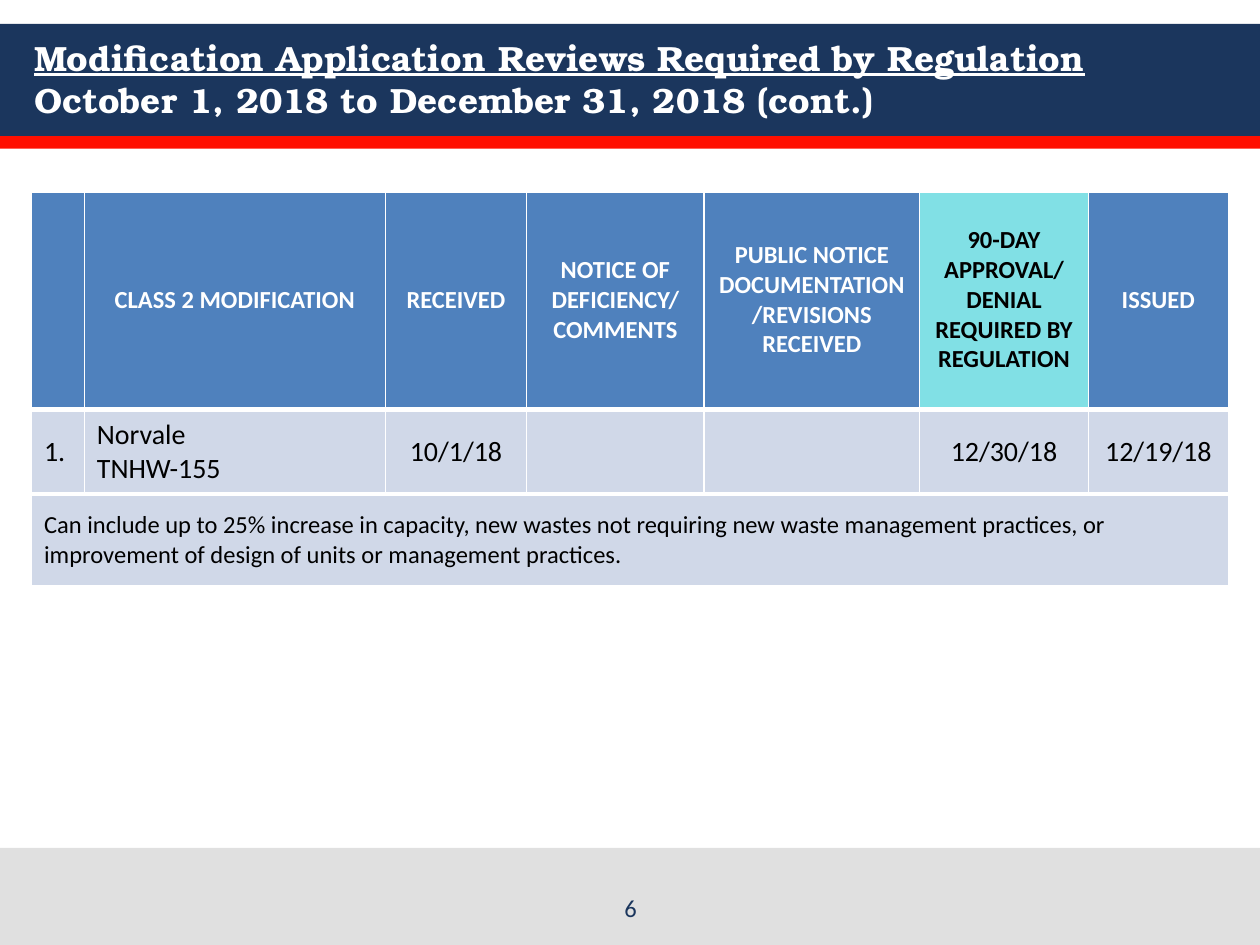
import pptx
import pptx.dml.color
import pptx.enum.shapes
import pptx.enum.text
import pptx.oxml
import pptx.oxml.ns
import pptx.util

Inches = pptx.util.Inches
Color = pptx.dml.color.RGBColor
Align = pptx.enum.text.PP_ALIGN
Anchor = pptx.enum.text.MSO_ANCHOR

NAVY = Color(0x1B, 0x36, 0x5D)
RED = Color(0xFF, 0x0F, 0x00)
GRAY = Color(0xE0, 0xE0, 0xE0)
BLUE = Color(0x4F, 0x81, 0xBD)
AQUA = Color(0x81, 0xE0, 0xE5)
PALE = Color(0xD0, 0xD8, 0xE8)
WHITE = Color(0xFF, 0xFF, 0xFF)
BLACK = Color(0x00, 0x00, 0x00)

COLS = [0.42, 2.39, 1.12, 1.41, 1.71, 1.34, 1.11]
ROWS = [1.74, 0.67, 0.74]
DUE = 5  # column of the regulatory deadline
HEADS = [
    "",
    "CLASS 2 MODIFICATION",
    "RECEIVED",
    "NOTICE OF DEFICIENCY/ COMMENTS",
    "PUBLIC NOTICE DOCUMENTATION/REVISIONS RECEIVED",
    "90-DAY APPROVAL/ DENIAL\nREQUIRED BY REGULATION",
    "ISSUED",
]
ENTRY = ["1.", "Norvale\nTNHW-155", "10/1/18", "", "", "12/30/18", "12/19/18"]
NOTE = (
    "Can include up to 25% increase in capacity, new wastes not requiring "
    "new waste management practices, or\n"
    "improvement of design of units or management practices."
)


def style(frame, size, color, align, face="Calibri", bold=False):
    for para in frame.paragraphs:
        para.alignment = align
        for font in [para.font] + [run.font for run in para.runs]:
            font.name = face
            font.size = pptx.util.Pt(size)
            font.bold = bold
            font.color.rgb = color


def add_band(slide, top, height, color):
    band = slide.shapes.add_shape(
        pptx.enum.shapes.MSO_SHAPE.RECTANGLE,
        0, Inches(top), Inches(10), Inches(height))
    band.shadow.inherit = False
    band.fill.solid()
    band.fill.fore_color.rgb = color
    band.line.fill.background()


def add_title(slide, text):
    """Fill the title and bring it in front of the bands."""
    title = slide.shapes.title
    title.left, title.top = Inches(0.17), Inches(0.17)
    title.width, title.height = Inches(9.67), Inches(0.9)
    frame = title.text_frame
    frame.text = text
    frame.vertical_anchor = Anchor.MIDDLE
    style(frame, 20, WHITE, Align.LEFT, "TeX Gyre Bonum", True)
    frame.paragraphs[0].runs[0].font.underline = True
    tree = title._element.getparent()
    tree.append(title._element)


def set_edges(cell, top, bottom):
    props = cell._tc.get_or_add_tcPr()
    for side, width in (("L", 1), ("R", 1), ("T", top), ("B", bottom)):
        props.append(pptx.oxml.parse_xml(
            f'<a:ln{side} {pptx.oxml.ns.nsdecls("a")} '
            f'w="{pptx.util.Pt(width)}"><a:solidFill>'
            f'<a:srgbClr val="{WHITE}"/></a:solidFill></a:ln{side}>'))


def set_cell(cell, text, fill, size, color, align, inset, bold=False):
    cell.text_frame.text = text
    cell.vertical_anchor = Anchor.MIDDLE
    cell.margin_left = cell.margin_right = Inches(inset)
    cell.margin_top = cell.margin_bottom = Inches(0.01)
    style(cell.text_frame, size, color, align, bold=bold)
    cell.fill.solid()
    cell.fill.fore_color.rgb = fill


def add_grid(slide):
    grid = slide.shapes.add_table(
        len(ROWS), len(COLS), Inches(0.25), Inches(1.51),
        Inches(sum(COLS)), Inches(sum(ROWS))).table
    grid.first_row = grid.horz_banding = False
    for col, width in zip(grid.columns, COLS):
        col.width = Inches(width)
    for row, height in zip(grid.rows, ROWS):
        row.height = Inches(height)
    last = len(COLS) - 1
    grid.cell(2, 0).merge(grid.cell(2, last))
    for cell in grid.iter_cells():
        set_edges(cell, 3, 3)
    for col, (head, item) in enumerate(zip(HEADS, ENTRY)):
        fill, color = (AQUA, BLACK) if col == DUE else (BLUE, WHITE)
        set_cell(grid.cell(0, col), head, fill, 14, color,
                 Align.CENTER, 0.08, True)
        align = Align.LEFT if col < 2 else Align.CENTER
        inset = 0.01 if col in (2, last) else 0.1
        set_cell(grid.cell(1, col), item, PALE, 16, BLACK, align, inset)
    set_cell(grid.cell(2, 0), NOTE, PALE, 14, BLACK, Align.LEFT, 0.1)


def add_number(slide, text):
    box = slide.shapes.add_textbox(
        Inches(3.42), Inches(6.97), Inches(3.17), Inches(0.4))
    frame = box.text_frame
    frame.word_wrap = True
    frame.vertical_anchor = Anchor.BOTTOM
    frame.text = text
    style(frame, 14, NAVY, Align.CENTER)


def main():
    deck = pptx.Presentation()
    deck.slide_width, deck.slide_height = Inches(10), Inches(7.5)
    slide = deck.slides.add_slide(deck.slide_layouts[5])
    add_band(slide, 0.19, 0.89, NAVY)
    add_band(slide, 1.08, 0.1, RED)
    add_band(slide, 6.73, 0.77, GRAY)
    add_title(slide, "Modification Application Reviews Required by Regulation\v"
                     "October 1, 2018 to December 31, 2018 (cont.)")
    add_grid(slide)
    add_number(slide, "6")
    deck.save("out.pptx")


if __name__ == "__main__":
    main()
